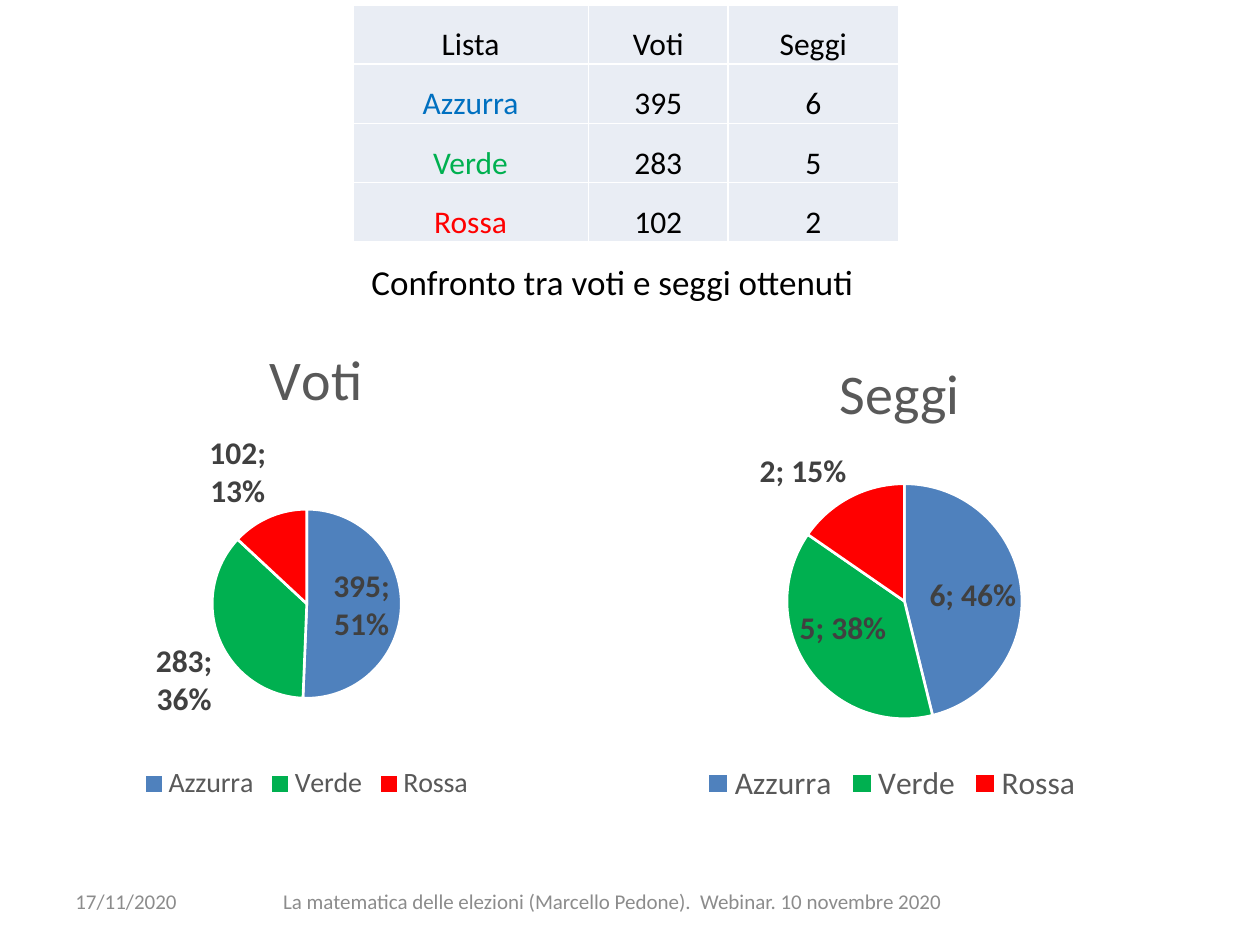
from dataclasses import dataclass

import pptx
import pptx.chart.data
import pptx.dml.color
import pptx.enum.chart
import pptx.enum.text
import pptx.oxml
import pptx.oxml.ns
import pptx.util

RGBColor = pptx.dml.color.RGBColor
Align = pptx.enum.text.PP_ALIGN
Anchor = pptx.enum.text.MSO_ANCHOR
Box = tuple[float, float, float, float]

BLACK = RGBColor(0x00, 0x00, 0x00)
WHITE = RGBColor(0xFF, 0xFF, 0xFF)
FOOTER_GRAY = RGBColor(0x8C, 0x8C, 0x8C)
TITLE_GRAY = RGBColor(0x59, 0x59, 0x59)
LABEL_GRAY = RGBColor(0x40, 0x40, 0x40)
CELL_FILL = RGBColor(0xE9, 0xED, 0xF4)
SLICE_BLUE = RGBColor(0x4F, 0x81, 0xBD)
TEXT_BLUE = RGBColor(0x00, 0x70, 0xC0)
GREEN = RGBColor(0x00, 0xB0, 0x50)
RED = RGBColor(0xFF, 0x00, 0x00)

FONT = "Calibri"
SLIDE_W, SLIDE_H = 10, 7.5
COL_WIDTHS = (1.87, 1.11, 1.35)
ROW_HEIGHT = 0.47


@dataclass(frozen=True)
class Party:
    name: str
    votes: int
    seats: int
    text_color: RGBColor
    slice_color: RGBColor


@dataclass(frozen=True)
class Pie:
    title: str
    values: tuple[int, ...]
    box: Box
    plot: Box
    title_at: tuple[float, float]
    legend_size: int


@dataclass(frozen=True)
class Caption:
    text: str
    box: Box
    size: int
    color: RGBColor
    align: Align
    anchor: Anchor
    wrap: bool = True


PARTIES = (
    Party("Azzurra", 395, 6, TEXT_BLUE, SLICE_BLUE),
    Party("Verde", 283, 5, GREEN, GREEN),
    Party("Rossa", 102, 2, RED, RED),
)
PIES = (
    Pie("Voti", tuple(p.votes for p in PARTIES), (0.35, 2.33, 4.17, 4.07),
        (0.32, 0.42, 0.36, 0.37), (0.41, 0.07), 16),
    Pie("Seggi", tuple(p.seats for p in PARTIES), (4.61, 2.45, 4.94, 3.97),
        (0.33, 0.35, 0.38, 0.47), (0.4, 0.07), 18),
)
CAPTIONS = (
    Caption("La matematica delle elezioni (Marcello Pedone).  Webinar. 10 novembre 2020 ",
            (1.77, 6.95, 6.22, 0.4), 12, FOOTER_GRAY, Align.CENTER, Anchor.MIDDLE),
    Caption("17/11/2020", (0.5, 6.95, 2.33, 0.4), 12, FOOTER_GRAY, Align.LEFT, Anchor.MIDDLE),
    Caption("Confronto tra voti e seggi ottenuti", (2.85, 2.02, 4.07, 0.44),
            20, BLACK, Align.LEFT, Anchor.TOP, False),
)


def inches(box: Box) -> list[int]:
    return [pptx.util.Inches(v) for v in box]


def set_font(font, size: float, color: RGBColor, bold: bool = False) -> None:
    font.name = FONT
    font.size = pptx.util.Pt(size)
    font.bold = bold
    font.color.rgb = color


def add_run(p, text: str, size: float, color: RGBColor) -> None:
    r = p.add_run()
    r.text = text
    set_font(r.font, size, color)


def add_caption(s, caption: Caption) -> None:
    tf = s.shapes.add_textbox(*inches(caption.box)).text_frame
    tf.word_wrap = caption.wrap
    tf.vertical_anchor = caption.anchor
    p = tf.paragraphs[0]
    p.alignment = caption.align
    add_run(p, caption.text, caption.size, caption.color)


def add_borders(cell) -> None:
    pr = cell._tc.get_or_add_tcPr()
    for i, side in enumerate(("lnL", "lnR", "lnT", "lnB")):
        pr.insert(i, pptx.oxml.parse_xml(
            f'<a:{side} {pptx.oxml.ns.nsdecls("a")} w="12700"><a:solidFill>'
            f'<a:srgbClr val="{WHITE}"/></a:solidFill></a:{side}>'))


def fill_cell(cell, text: str, color: RGBColor) -> None:
    cell.fill.solid()
    cell.fill.fore_color.rgb = CELL_FILL
    cell.margin_left = cell.margin_right = cell.margin_top = pptx.util.Inches(0.01)
    cell.margin_bottom = 0
    cell.vertical_anchor = Anchor.BOTTOM
    p = cell.text_frame.paragraphs[0]
    p.alignment = Align.CENTER
    add_run(p, text, 18, color)
    add_borders(cell)


def add_results_table(s) -> None:
    rows = [("Lista", "Voti", "Seggi", BLACK)]
    rows += [(p.name, str(p.votes), str(p.seats), p.text_color) for p in PARTIES]
    box = (2.8, 0.04, sum(COL_WIDTHS), ROW_HEIGHT * len(rows))
    table = s.shapes.add_table(len(rows), len(COL_WIDTHS), *inches(box)).table
    table.first_row = table.horz_banding = False
    for column, width in zip(table.columns, COL_WIDTHS):
        column.width = pptx.util.Inches(width)
    for i, (*texts, name_color) in enumerate(rows):
        for j, text in enumerate(texts):
            fill_cell(table.cell(i, j), text, name_color if j == 0 else BLACK)


def place(element, shares: tuple[float, ...], target: str = "") -> None:
    names = ("x", "y", "w", "h")[:len(shares)]
    modes = "".join(f'<c:{n}Mode val="edge"/>' for n in names[:2])
    values = "".join(f'<c:{n} val="{v}"/>' for n, v in zip(names, shares))
    for old in element.findall(pptx.oxml.ns.qn("c:layout")):
        element.remove(old)
    layout = pptx.oxml.parse_xml(
        f'<c:layout {pptx.oxml.ns.nsdecls("c")}><c:manualLayout>'
        f'{target}{modes}{values}</c:manualLayout></c:layout>')
    text = element.find(pptx.oxml.ns.qn("c:tx"))
    element.insert(0 if text is None else element.index(text) + 1, layout)


def add_pie(s, pie: Pie) -> None:
    data = pptx.chart.data.CategoryChartData()
    data.categories = [p.name for p in PARTIES]
    data.add_series(pie.title, pie.values)
    chart = s.shapes.add_chart(
        pptx.enum.chart.XL_CHART_TYPE.PIE, *inches(pie.box), data).chart
    set_font(chart.font, 10, BLACK)
    chart.has_title = True
    title = chart.chart_title
    add_run(title.text_frame.paragraphs[0], pie.title, 32, TITLE_GRAY)
    title.include_in_layout = False
    place(title._element, pie.title_at)
    chart.has_legend = True
    chart.legend.position = pptx.enum.chart.XL_LEGEND_POSITION.BOTTOM
    chart.legend.include_in_layout = False
    set_font(chart.legend.font, pie.legend_size, TITLE_GRAY)
    plot = chart.plots[0]
    plot.vary_by_categories = True
    series = plot.series[0]
    for i, party in enumerate(PARTIES):
        fmt = series.points[i].format
        fmt.fill.solid()
        fmt.fill.fore_color.rgb = party.slice_color
        fmt.line.color.rgb = WHITE
        fmt.line.width = pptx.util.Pt(1.5)
    labels = series.data_labels
    labels.show_value = labels.show_percentage = True
    labels.position = pptx.enum.chart.XL_LABEL_POSITION.BEST_FIT
    set_font(labels.font, 18, LABEL_GRAY, True)
    area = chart._chartSpace.chart.plotArea
    place(area, pie.plot, '<c:layoutTarget val="inner"/>')


def main() -> None:
    prs = pptx.Presentation()
    prs.slide_width = pptx.util.Inches(SLIDE_W)
    prs.slide_height = pptx.util.Inches(SLIDE_H)
    s = prs.slides.add_slide(prs.slide_layouts[6])
    for pie in PIES:
        add_pie(s, pie)
    add_results_table(s)
    for caption in CAPTIONS:
        add_caption(s, caption)
    prs.save("out.pptx")


if __name__ == "__main__":
    main()
